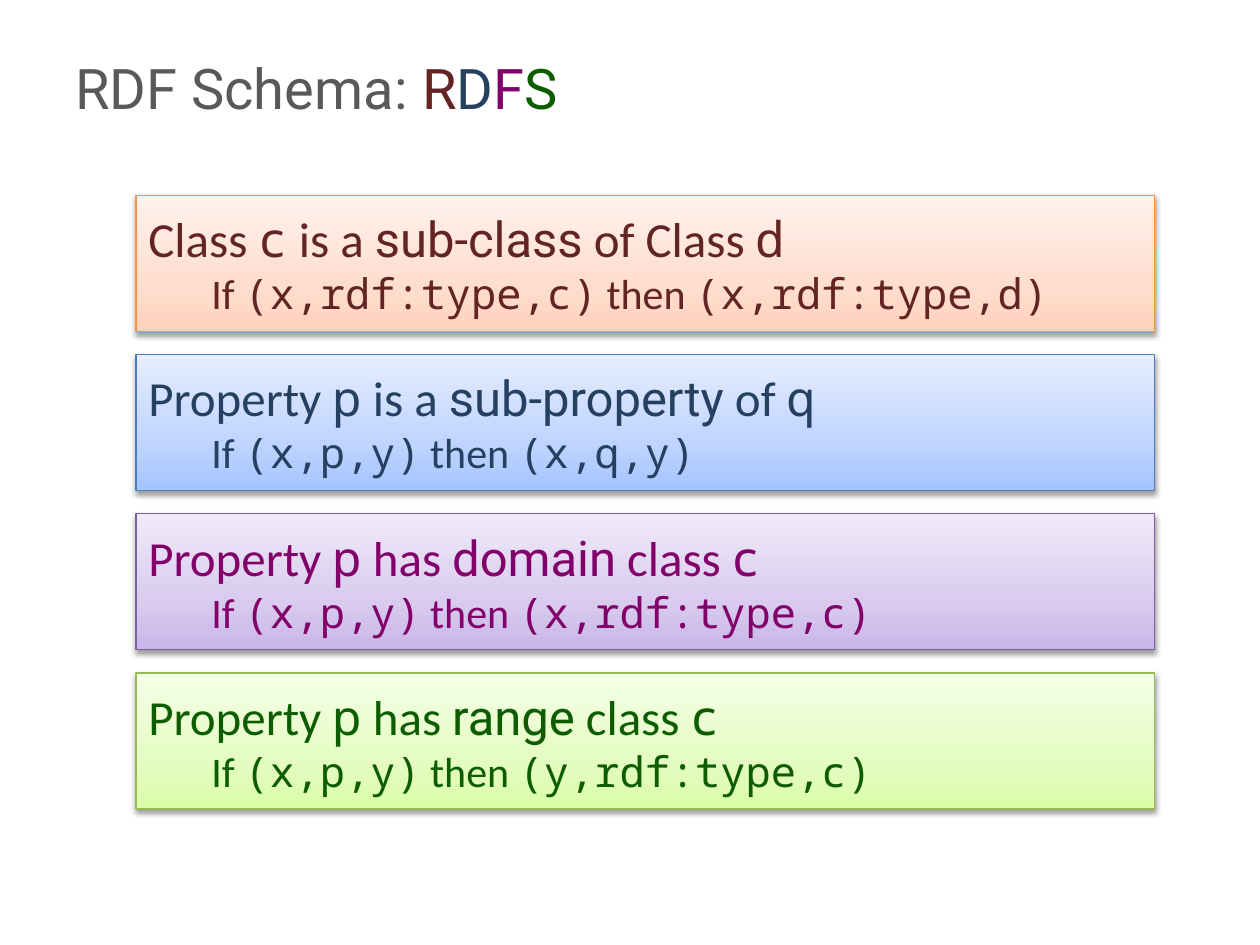
from copy import deepcopy

from lxml.etree import SubElement
from pptx import Presentation
from pptx.dml.color import RGBColor
from pptx.enum.shapes import MSO_SHAPE
from pptx.enum.text import MSO_ANCHOR, PP_ALIGN
from pptx.oxml.ns import qn
from pptx.util import Pt

GREY = RGBColor(0x59, 0x59, 0x59)
BROWN = RGBColor(0x63, 0x25, 0x23)
NAVY = RGBColor(0x25, 0x40, 0x61)
PLUM = RGBColor(0x82, 0x00, 0x69)
GREEN = RGBColor(0x0D, 0x5C, 0x00)
ORANGE_LINE = RGBColor(0xF6, 0x92, 0x40)
BLUE_LINE = RGBColor(0x4B, 0x7E, 0xBC)
VIOLET_LINE = RGBColor(0x7D, 0x60, 0xA0)
LIME_LINE = RGBColor(0x98, 0xB9, 0x55)
PEACH = (RGBColor(0xFF, 0xD2, 0xBD), RGBColor(0xFF, 0xDE, 0xD0), RGBColor(0xFF, 0xF2, 0xED))
SKY = (RGBColor(0xA4, 0xC4, 0xFF), RGBColor(0xBF, 0xD4, 0xFF), RGBColor(0xE6, 0xEE, 0xFF))
LILAC = (RGBColor(0xC9, 0xB5, 0xE8), RGBColor(0xD8, 0xCB, 0xEE), RGBColor(0xF0, 0xEA, 0xF9))
LIME = (RGBColor(0xDA, 0xFD, 0xA7), RGBColor(0xE4, 0xFC, 0xC2), RGBColor(0xF5, 0xFF, 0xE7))

SANS, MONO, HEAD = "Calibri", "Noto Sans Mono", "Roboto"

RULES = [
    (["Class ", "c", " is a ", "sub-class", " of Class ", "d"],
     "(x,rdf:type,c)", "(x,rdf:type,d)", BROWN, ORANGE_LINE, PEACH),
    (["Property ", "p", " is a ", "sub-property", " of ", "q"],
     "(x,p,y)", "(x,q,y)", NAVY, BLUE_LINE, SKY),
    (["Property ", "p", " has ", "domain", " class ", "c"],
     "(x,p,y)", "(x,rdf:type,c)", PLUM, VIOLET_LINE, LILAC),
    (["Property ", "p", " has ", "range", " class ", "c"],
     "(x,p,y)", "(y,rdf:type,c)", GREEN, LIME_LINE, LIME),
]
FONTS = [SANS, MONO, SANS, HEAD, SANS, MONO]


def add_text(para, text, font=SANS, size=28, color=GREY):
    """Add one formatted run to a paragraph."""
    run = para.add_run()
    run.text = text
    run.font.name = font
    run.font.size = Pt(size)
    run.font.color.rgb = color


def add_fade(shape, colors):
    """Fill a shape with a three-stop gradient rising from the bottom."""
    shape.fill.gradient()
    shape.fill.gradient_angle = 90
    stops = shape._element.spPr.find(qn("a:gradFill")).find(qn("a:gsLst"))
    stops.append(deepcopy(stops[-1]))
    for stop, color, place in zip(shape.fill.gradient_stops, colors, (0, 0.35, 1)):
        stop.color.rgb = color
        stop.position = place


def add_shadow(shape):
    """Give a shape a soft black shadow falling straight down."""
    shape.shadow.inherit = False
    effects = shape._element.spPr.find(qn("a:effectLst"))
    outer = SubElement(effects, qn("a:outerShdw"), blurRad=str(Pt(3.1)),
                       dist=str(Pt(1.6)), dir="5400000", rotWithShape="0")
    black = SubElement(outer, qn("a:srgbClr"), val="000000")
    SubElement(black, qn("a:alpha"), val="38000")


def add_title(slide, left, top, width, height):
    """Place the title with its coloured letters."""
    frame = slide.shapes.add_textbox(Pt(left), Pt(top), Pt(width), Pt(height)).text_frame
    frame.word_wrap = True
    frame.vertical_anchor = MSO_ANCHOR.MIDDLE
    para = frame.paragraphs[0]
    add_text(para, "RDF Schema: ", font=HEAD, size=32)
    for char, color in zip("RDFS", (BROWN, NAVY, PLUM, GREEN)):
        add_text(para, char, font=HEAD, size=32, color=color)


def add_rule(slide, left, top, width, height, rule):
    """Place one rule box with its statement and its inference."""
    words, given, result, color, edge, fade = rule
    box = slide.shapes.add_shape(MSO_SHAPE.RECTANGLE, Pt(left), Pt(top), Pt(width), Pt(height))
    add_fade(box, fade)
    box.line.color.rgb = edge
    box.line.width = Pt(0.75)
    add_shadow(box)
    frame = box.text_frame
    frame.word_wrap = True
    frame.vertical_anchor = MSO_ANCHOR.MIDDLE
    claim, proof = frame.paragraphs[0], frame.add_paragraph()
    claim.alignment = proof.alignment = PP_ALIGN.LEFT
    proof.level = 1
    proof._p.get_or_add_pPr().set("marL", str(Pt(36)))
    for text, font in zip(words, FONTS):
        add_text(claim, text, font=font, color=color)
    for text, font in zip(("If ", given, " then ", result), FONTS[:2] * 2):
        add_text(proof, text, font=font, size=24, color=color)


def add_rules(slide, left, top, width, height, gap):
    """Stack the rule boxes with equal gaps."""
    tall = (height - gap * (len(RULES) - 1)) / len(RULES)
    for row, rule in enumerate(RULES):
        add_rule(slide, left, top + row * (tall + gap), width, tall, rule)


def main():
    """Build and save the slide."""
    deck = Presentation()
    deck.slide_width, deck.slide_height = Pt(720), Pt(540)
    slide = deck.slides.add_slide(deck.slide_layouts[6])
    add_title(slide, 36, 21.6, 648, 56)
    add_rules(slide, 77.75, 111.6, 582, 350.75, 13.25)
    deck.save("out.pptx")


if __name__ == "__main__":
    main()
